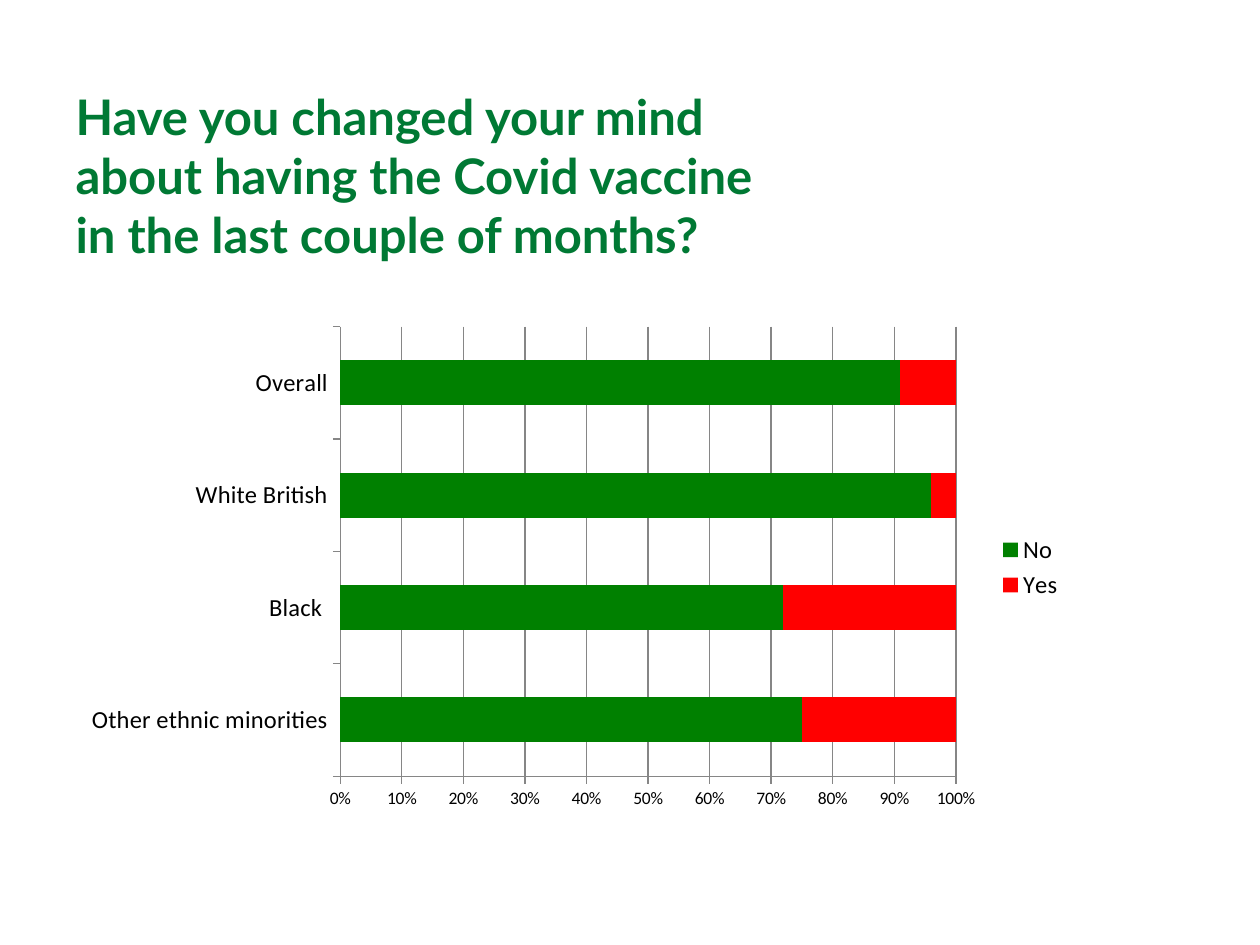
from pptx import Presentation
from pptx import util as u
from pptx.chart.data import CategoryChartData
from pptx.dml.color import RGBColor
from pptx.enum import chart as ch
from pptx.enum import text

WIDTH, HEIGHT = 10, 7.5
COLORS = {"title": "007934", "No": "008000", "Yes": "FF0000",
          "text": "000000", "axis": "868686"}
CATEGORIES = ["Other ethnic minorities", "Black ", "White British", "Overall"]
ANSWERS = {"No": [75, 72, 96, 91], "Yes": [25, 28, 4, 9]}


def color(name):
    return RGBColor.from_string(COLORS[name])


def share_box(left, top, width, height):
    """Turn shares of the slide's size into lengths."""
    return (u.Inches(left * WIDTH), u.Inches(top * HEIGHT),
            u.Inches(width * WIDTH), u.Inches(height * HEIGHT))


def format_font(font, size, face="Calibri", fill="text", bold=False):
    font.size, font.name, font.bold = u.Pt(size), face, bold
    font.color.rgb = color(fill)


def write_text(frame, words, align=text.PP_ALIGN.LEFT,
               anchor=text.MSO_ANCHOR.TOP, **font):
    frame.word_wrap = True
    frame.auto_size = text.MSO_AUTO_SIZE.NONE
    frame.vertical_anchor = anchor
    para = frame.paragraphs[0]
    para.text = words
    para.alignment = align
    for span in para.runs:
        format_font(span.font, **font)


def place_title(page, box):
    title = page.shapes.title
    title.left, title.top, title.width, title.height = box
    write_text(title.text_frame,
               "Have you changed your mind \vabout having the Covid vaccine "
               "\vin the last couple of months?",
               size=28, face="Lato", fill="title", bold=True)


def style_axis(axis, size):
    axis.major_tick_mark = ch.XL_TICK_MARK.OUTSIDE
    axis.minor_tick_mark = ch.XL_TICK_MARK.NONE
    axis.format.line.color.rgb = color("axis")
    format_font(axis.tick_labels.font, size)


def place_chart(page, box):
    data = CategoryChartData()
    data.categories = CATEGORIES
    for name, values in ANSWERS.items():
        data.add_series(name, values)
    chart = page.shapes.add_chart(
        ch.XL_CHART_TYPE.BAR_STACKED_100, *box, data).chart
    chart.has_title = False
    format_font(chart.font, 10)

    # Bars
    plot = chart.plots[0]
    plot.gap_width, plot.overlap, plot.vary_by_categories = 150, 100, False
    for series in plot.series:
        series.format.fill.solid()
        series.format.fill.fore_color.rgb = color(series.name)

    # Axes
    style_axis(chart.category_axis, 14)
    style_axis(chart.value_axis, 10)
    labels = chart.value_axis.tick_labels
    labels.number_format, labels.number_format_is_linked = "0%", False
    chart.value_axis.has_major_gridlines = True
    chart.value_axis.major_gridlines.format.line.color.rgb = color("axis")

    # Legend
    chart.has_legend = True
    chart.legend.position = ch.XL_LEGEND_POSITION.RIGHT
    chart.legend.include_in_layout = False
    format_font(chart.legend.font, 14)


def main():
    deck = Presentation()
    deck.slide_width, deck.slide_height = u.Inches(WIDTH), u.Inches(HEIGHT)
    page = deck.slides.add_slide(deck.slide_layouts[5])
    place_title(page, share_box(0.05, 0.085, 0.855, 0.25))
    place_chart(page, share_box(0.057, 0.335, 0.797, 0.531))
    deck.save("out.pptx")


if __name__ == "__main__":
    main()
